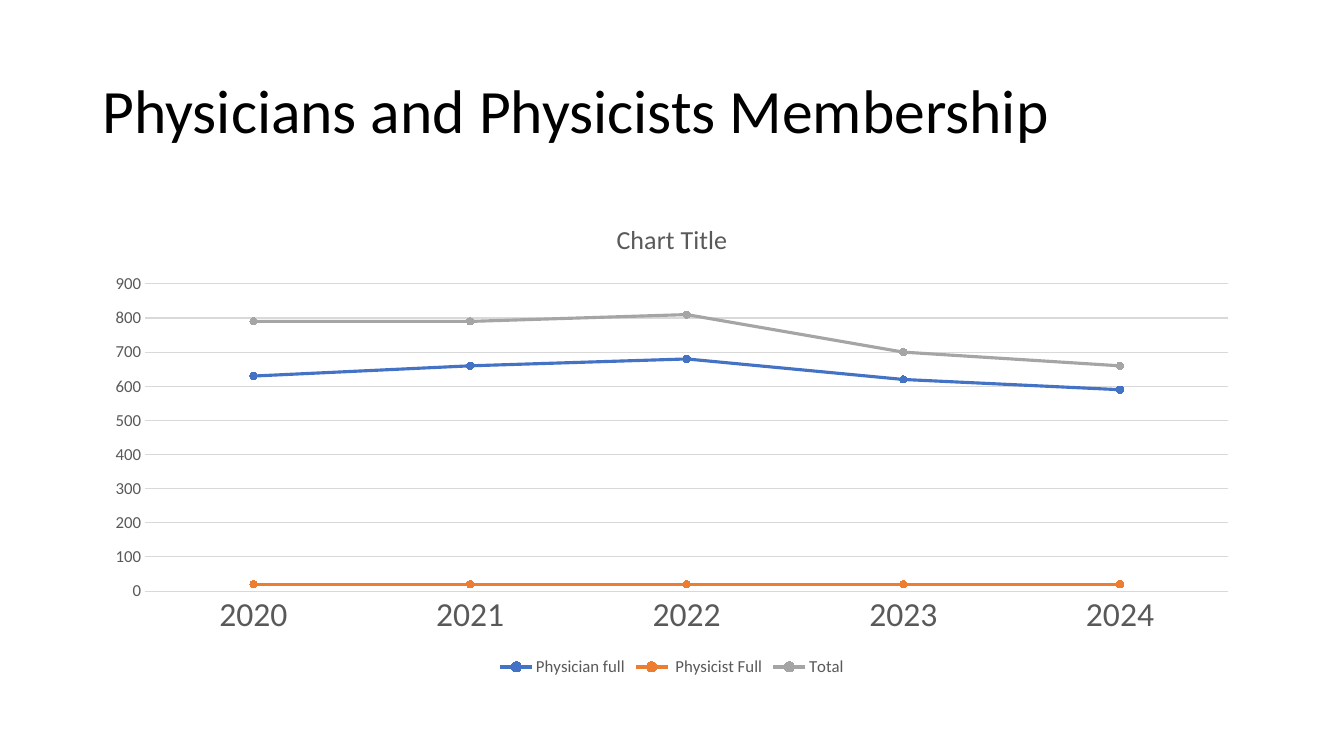
from dataclasses import dataclass

from pptx import Presentation
from pptx.chart.axis import _BaseAxis
from pptx.chart.chart import Chart
from pptx.chart.data import CategoryChartData
from pptx.chart.series import LineSeries
from pptx.dml.color import RGBColor
from pptx.dml.line import LineFormat
from pptx.enum.chart import XL_CHART_TYPE, XL_LEGEND_POSITION, XL_MARKER_STYLE, XL_TICK_MARK
from pptx.enum.text import MSO_ANCHOR, MSO_AUTO_SIZE, PP_ALIGN
from pptx.slide import Slide
from pptx.text.text import Font
from pptx.util import Cm, Pt

LINE_MARKERS = XL_CHART_TYPE.LINE_MARKERS
BOTTOM = XL_LEGEND_POSITION.BOTTOM
CIRCLE = XL_MARKER_STYLE.CIRCLE
NO_TICK = XL_TICK_MARK.NONE
MIDDLE = MSO_ANCHOR.MIDDLE
NO_FIT = MSO_AUTO_SIZE.NONE
LEFT = PP_ALIGN.LEFT


@dataclass(frozen=True)
class Theme:
    font: str = "Calibri"
    title: str = "000000"
    label: str = "595959"
    grid: str = "D9D9D9"
    title_size: float = 44
    chart_title_size: float = 18.6
    year_size: float = 24
    label_size: float = 12
    grid_width: float = 0.75
    series_width: float = 2.25
    marker_size: int = 5


@dataclass(frozen=True)
class Membership:
    name: str
    values: tuple[int, ...]
    color: str


THEME = Theme()
YEARS = ("2020", "2021", "2022", "2023", "2024")
MEMBERSHIPS = (
    Membership("Physician full", (630, 660, 680, 620, 590), "4472C4"),
    Membership(" Physicist Full", (20, 20, 20, 20, 20), "ED7D31"),
    Membership("Total", (790, 790, 810, 700, 660), "A5A5A5"),
)

# Both blocks share the same left edge and width
MARGIN, CONTENT_WIDTH = Cm(2.33), Cm(29.21)


def style_font(font: Font, size: float, color: str = THEME.label) -> None:
    font.name = THEME.font
    font.size = Pt(size)
    font.bold = False
    font.color.rgb = RGBColor.from_string(color)


def style_line(line: LineFormat, color: str, width: float) -> None:
    line.color.rgb = RGBColor.from_string(color)
    line.width = Pt(width)


def style_axis(axis: _BaseAxis, size: float) -> None:
    axis.major_tick_mark = axis.minor_tick_mark = NO_TICK
    style_font(axis.tick_labels.font, size)


def style_series(series: LineSeries, color: str) -> None:
    series.smooth = False
    style_line(series.format.line, color, THEME.series_width)
    marker = series.marker
    marker.style = CIRCLE
    marker.size = THEME.marker_size
    marker.format.fill.solid()
    marker.format.fill.fore_color.rgb = RGBColor.from_string(color)
    style_line(marker.format.line, color, THEME.grid_width)


def add_title(s: Slide, text: str) -> None:
    sp = s.shapes.title
    sp.left, sp.top, sp.width, sp.height = MARGIN, Cm(1.01), CONTENT_WIDTH, Cm(3.68)
    tf = sp.text_frame
    tf.text = text
    tf.auto_size = NO_FIT
    tf.vertical_anchor = MIDDLE
    p = tf.paragraphs[0]
    p.alignment = LEFT
    p.line_spacing = 0.9
    style_font(p.font, THEME.title_size, THEME.title)


def add_membership_chart(s: Slide) -> Chart:
    data = CategoryChartData()
    data.categories = YEARS
    for membership in MEMBERSHIPS:
        data.add_series(membership.name, membership.values)
    chart = s.shapes.add_chart(
        LINE_MARKERS, MARGIN, Cm(5.07), CONTENT_WIDTH, Cm(12.09), data
    ).chart
    style_font(chart.font, THEME.label_size)

    # Chart title and legend
    chart.has_title = True
    tf = chart.chart_title.text_frame
    tf.text = "Chart Title"
    style_font(tf.paragraphs[0].font, THEME.chart_title_size)
    chart.chart_title.include_in_layout = False
    chart.has_legend = True
    chart.legend.position = BOTTOM
    chart.legend.include_in_layout = False
    style_font(chart.legend.font, THEME.label_size)

    # Axes
    years, members = chart.category_axis, chart.value_axis
    style_axis(years, THEME.year_size)
    style_line(years.format.line, THEME.grid, THEME.grid_width)
    style_axis(members, THEME.label_size)
    members.minimum_scale, members.maximum_scale, members.major_unit = 0, 900, 100
    members.format.line.fill.background()
    style_line(members.major_gridlines.format.line, THEME.grid, THEME.grid_width)

    # Series
    chart.plots[0].vary_by_categories = False
    for series, membership in zip(chart.plots[0].series, MEMBERSHIPS):
        style_series(series, membership.color)
    return chart


def main() -> None:
    prs = Presentation()
    prs.slide_width, prs.slide_height = Cm(33.87), Cm(19.05)
    s = prs.slides.add_slide(prs.slide_layouts[5])
    add_title(s, "Physicians and Physicists Membership")
    add_membership_chart(s)
    prs.save("out.pptx")


if __name__ == "__main__":
    main()
